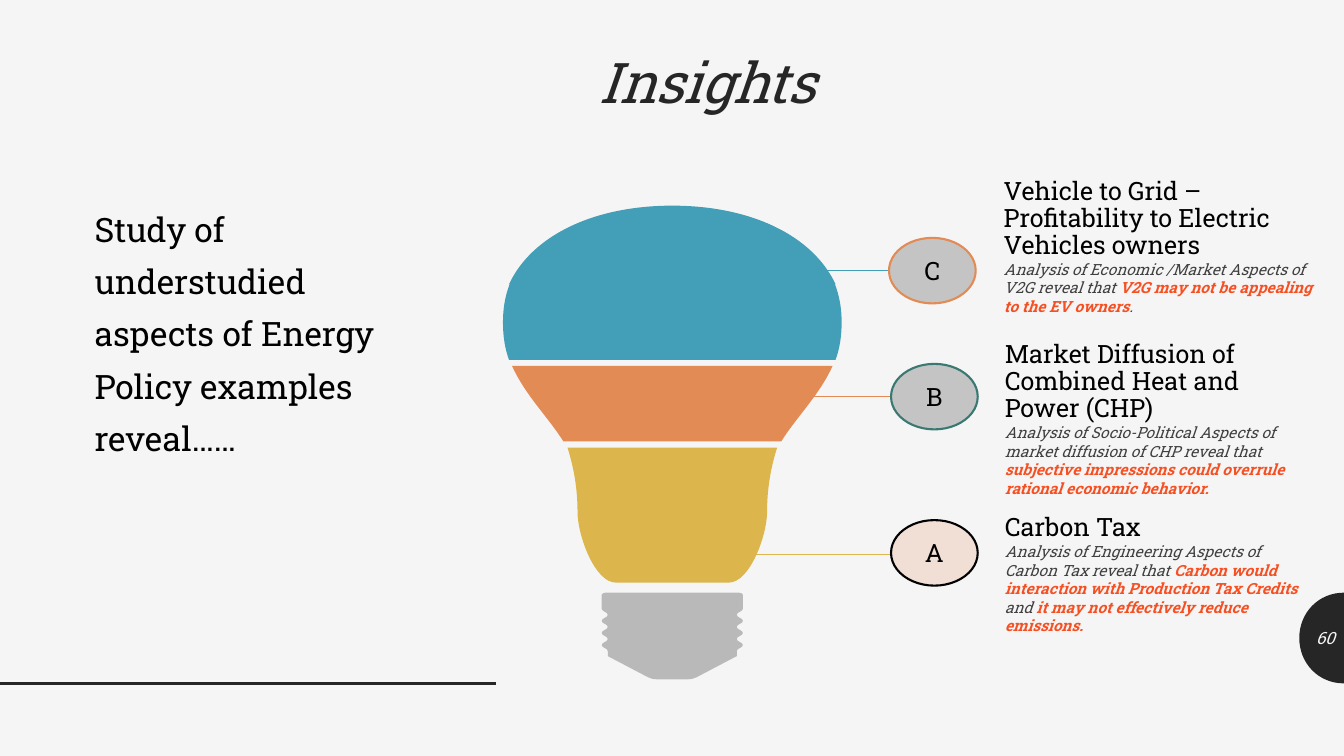
from dataclasses import dataclass

import lxml.etree
import pptx
import pptx.dml.color
import pptx.enum.shapes
import pptx.enum.text
import pptx.oxml.ns
import pptx.util

Inches = pptx.util.Inches
Align = pptx.enum.text.PP_ALIGN
Anchor = pptx.enum.text.MSO_ANCHOR
qn = pptx.oxml.ns.qn
Point = tuple[float, float]
Box = tuple[float, float, float, float]
Segment = list[Point]  # one point for a line, three for a Bezier curve


@dataclass(frozen=True)
class Theme:
    font: str = "Roboto Slab"
    paper: str = "F5F5F5"
    dark: str = "262626"
    black: str = "000000"
    body: str = "404040"
    accent: str = "F64F22"
    blue: str = "439EB7"
    orange: str = "E28B55"
    yellow: str = "DCB64D"
    teal: str = "397972"
    grey: str = "7F7F7F"
    title_pt: int = 40
    lead_pt: int = 24
    head_pt: int = 18
    body_pt: int = 11
    number_pt: int = 12


T = Theme()


@dataclass(frozen=True)
class Run:
    text: str
    size: int = T.body_pt
    color: str = T.body
    italic: bool = True
    bold: bool = False


@dataclass(frozen=True)
class Para:
    runs: list[Run]
    spacing: float = 1.0
    align: Align = Align.LEFT


@dataclass(frozen=True)
class BulbPart:
    """Left half of a part, to be mirrored about the bulb's axis."""
    color: str
    start: Point
    segments: list[Segment]
    opacity: int = 100


@dataclass(frozen=True)
class Insight:
    letter: str
    badge: Point
    badge_fill: str
    badge_line: str
    lead: tuple[float, float, str]  # start x, y, colour
    box: Box
    heading: str
    detail: list[Run]


def strong(text: str) -> Run:
    return Run(text, color=T.accent, bold=True)


def rgb(color: str) -> pptx.dml.color.RGBColor:
    return pptx.dml.color.RGBColor.from_string(color)


def paint(sp, color: str, opacity: int = 100) -> None:
    sp.shadow.inherit = False
    sp.fill.solid()
    sp.fill.fore_color.rgb = rgb(color)
    if opacity < 100:
        clr = sp.fill._xPr.find(".//" + qn("a:srgbClr"))
        lxml.etree.SubElement(clr, qn("a:alpha")).set("val", str(opacity * 1000))


def write(tf, paras: list[Para]) -> None:
    for i, para in enumerate(paras):
        p = tf.add_paragraph() if i else tf.paragraphs[0]
        p.alignment = para.align
        p.line_spacing = para.spacing
        for run in para.runs:
            r = p.add_run()
            r.text = run.text
            r.font.name = T.font
            r.font.size = pptx.util.Pt(run.size)
            r.font.color.rgb = rgb(run.color)
            r.font.italic = run.italic
            r.font.bold = run.bold


def add_text(s, box: Box, paras: list[Para], anchor: Anchor = Anchor.TOP) -> None:
    tf = s.shapes.add_textbox(*map(Inches, box)).text_frame
    tf.word_wrap = True
    tf.vertical_anchor = anchor
    write(tf, paras)


def add_line(s, start: Point, end: Point, color: str, width: float) -> None:
    straight = pptx.enum.shapes.MSO_CONNECTOR.STRAIGHT
    line = s.shapes.add_connector(straight, *map(Inches, start + end))
    line.line.color.rgb = rgb(color)
    line.line.width = pptx.util.Pt(width)
    lxml.etree.SubElement(line._element.spPr, qn("a:effectLst"))


def add_outline(s, start: Point, segments: list[Segment], color: str, opacity: int = 100) -> None:
    """Draw a closed freeform, joining each three-point segment into a curve."""
    builder = s.shapes.build_freeform(*map(Inches, start))
    builder.add_line_segments([(Inches(x), Inches(y)) for seg in segments for x, y in seg])
    sp = builder.convert_to_shape()
    lines = iter(list(sp._element.iter(qn("a:lnTo"))))
    for segment in segments:
        nodes = [next(lines) for _ in segment]
        if len(nodes) == 3:
            curve = lxml.etree.Element(qn("a:cubicBezTo"))
            nodes[0].addprevious(curve)
            for node in nodes:
                curve.append(node[0])
                node.getparent().remove(node)
    paint(sp, color, opacity)
    sp.line.fill.background()


def add_bulb_part(s, part: BulbPart) -> None:
    points = [part.start] + [point for seg in part.segments for point in seg]
    mirrored = iter([(2 * AXIS - x, y) for x, y in reversed(points)])
    right = [[next(mirrored)]]
    right += [[next(mirrored) for _ in seg] for seg in reversed(part.segments)]
    add_outline(s, part.start, part.segments + right, part.color, part.opacity)


def add_badge(s, item: Insight) -> None:
    oval = pptx.enum.shapes.MSO_SHAPE.OVAL
    sp = s.shapes.add_shape(oval, *map(Inches, item.badge + BADGE_SIZE))
    paint(sp, item.badge_fill, 20)
    sp.line.color.rgb = rgb(item.badge_line)
    sp.line.width = pptx.util.Pt(1.5)
    sp.text_frame.word_wrap = False
    sp.text_frame.vertical_anchor = Anchor.MIDDLE
    letter = Run(item.letter, T.head_pt, T.black, italic=False)
    write(sp.text_frame, [Para([letter], align=Align.CENTER)])


SLIDE_W, SLIDE_H = 40 / 3, 7.5
AXIS = 6.67
BADGE_SIZE = (0.86, 0.65)
THREAD_X, THREAD_TOP, THREAD_STEP = (5.97, 6.03), 6.04, 0.06
THREADS = [
    [(THREAD_X[i % 2], y + THREAD_STEP / 2), (THREAD_X[1 - i % 2], y + THREAD_STEP / 2),
     (THREAD_X[1 - i % 2], y + THREAD_STEP)]
    for i in range(7) for y in [THREAD_TOP + i * THREAD_STEP]
]
BULB = [
    BulbPart(T.grey, (6.01, 5.88),
             [[(5.99, 5.88), (5.97, 5.89), (5.97, 5.9)], [(5.97, THREAD_TOP)], *THREADS,
              [(6.03, 6.51)], [(6.43, 6.72)], [(6.45, 6.73), (6.48, 6.74), (6.52, 6.74)]], 50),
    BulbPart(T.blue, (AXIS, 2.04), [[(5.9, 2.04), (5.28, 2.33), (5.05, 2.82)]]),
    BulbPart(T.blue, (5.06, 2.81),
             [[(5.01, 2.94), (4.99, 3.06), (4.99, 3.2)],
              [(4.99, 3.34), (5.01, 3.46), (5.05, 3.57)]]),
    BulbPart(T.yellow, (5.63, 4.44),
             [[(5.69, 4.63), (5.73, 4.84), (5.73, 5.08)],
              [(5.73, 5.31), (5.9, 5.78), (6.11, 5.78)]]),
    BulbPart(T.orange, (5.08, 3.63), [[(5.21, 3.92), (5.44, 4.14), (5.59, 4.38)]]),
]
PAGE_DISC = [[(13.08, 5.88), (12.89, 6.08), (12.89, 6.33)],
             [(12.89, 6.58), (13.08, 6.78), (SLIDE_W, 6.78)]]
INSIGHTS = [
    Insight("C", (8.82, 2.36), T.black, T.orange, (7.9, 2.68, T.blue), (9.86, 1.72, 3.26, 1.47),
            "Vehicle to Grid – Profitability to Electric Vehicles owners",
            [Run("Analysis of Economic /Market Aspects of V2G reveal that "),
             strong("V2G may not be appealing to the EV owners"), Run(".")]),
    Insight("B", (8.84, 3.61), T.black, T.teal, (7.5, 3.93, T.orange), (9.87, 3.34, 3.1, 1.66),
            "Market Diffusion of Combined Heat and Power (CHP)",
            [Run("Analysis of Socio-Political Aspects of market diffusion of CHP reveal that "),
             strong("subjective impressions could overrule rational economic behavior.")]),
    Insight("A", (8.84, 5.16), T.orange, T.black, (7.17, 5.5, T.yellow), (9.87, 5.06, 3.25, 1.11),
            "Carbon Tax",
            [Run("Analysis of Engineering Aspects of Carbon Tax reveal that "),
             strong("Carbon would interaction with Production Tax Credits"), Run(" and "),
             strong("it may not effectively reduce emissions.")]),
]


def main() -> None:
    prs = pptx.Presentation()
    prs.slide_width, prs.slide_height = Inches(SLIDE_W), Inches(SLIDE_H)
    s = prs.slides.add_slide(prs.slide_layouts[6])
    s.background.fill.solid()
    s.background.fill.fore_color.rgb = rgb(T.paper)

    add_outline(s, (SLIDE_W, 5.88), PAGE_DISC, T.dark)
    add_line(s, (0, 6.78), (4.92, 6.78), T.dark, 2)
    add_text(s, (1.06, 0.5, 11.91, 0.98),
             [Para([Run("Insights", T.title_pt, T.dark)], 0.9, Align.CENTER)])
    for item in INSIGHTS:
        x, y, color = item.lead
        add_line(s, (x, y), (item.badge[0], y), color, 0.5)
    for part in BULB:
        add_bulb_part(s, part)
    for item in INSIGHTS:
        add_badge(s, item)
        heading = Run(item.heading, T.head_pt, T.black, italic=False)
        add_text(s, item.box, [Para([heading], 0.9), Para(item.detail)])
    study = "Study of understudied aspects of Energy Policy examples reveal……"
    add_text(s, (0.84, 1.9, 3.5, 2.67),
             [Para([Run(study, T.lead_pt, T.black, italic=False)], 1.3)])
    add_text(s, (12.89, 6.13, 0.45, 0.4),
             [Para([Run("60", T.number_pt, T.paper)], align=Align.RIGHT)], Anchor.MIDDLE)
    prs.save("out.pptx")


if __name__ == "__main__":
    main()
